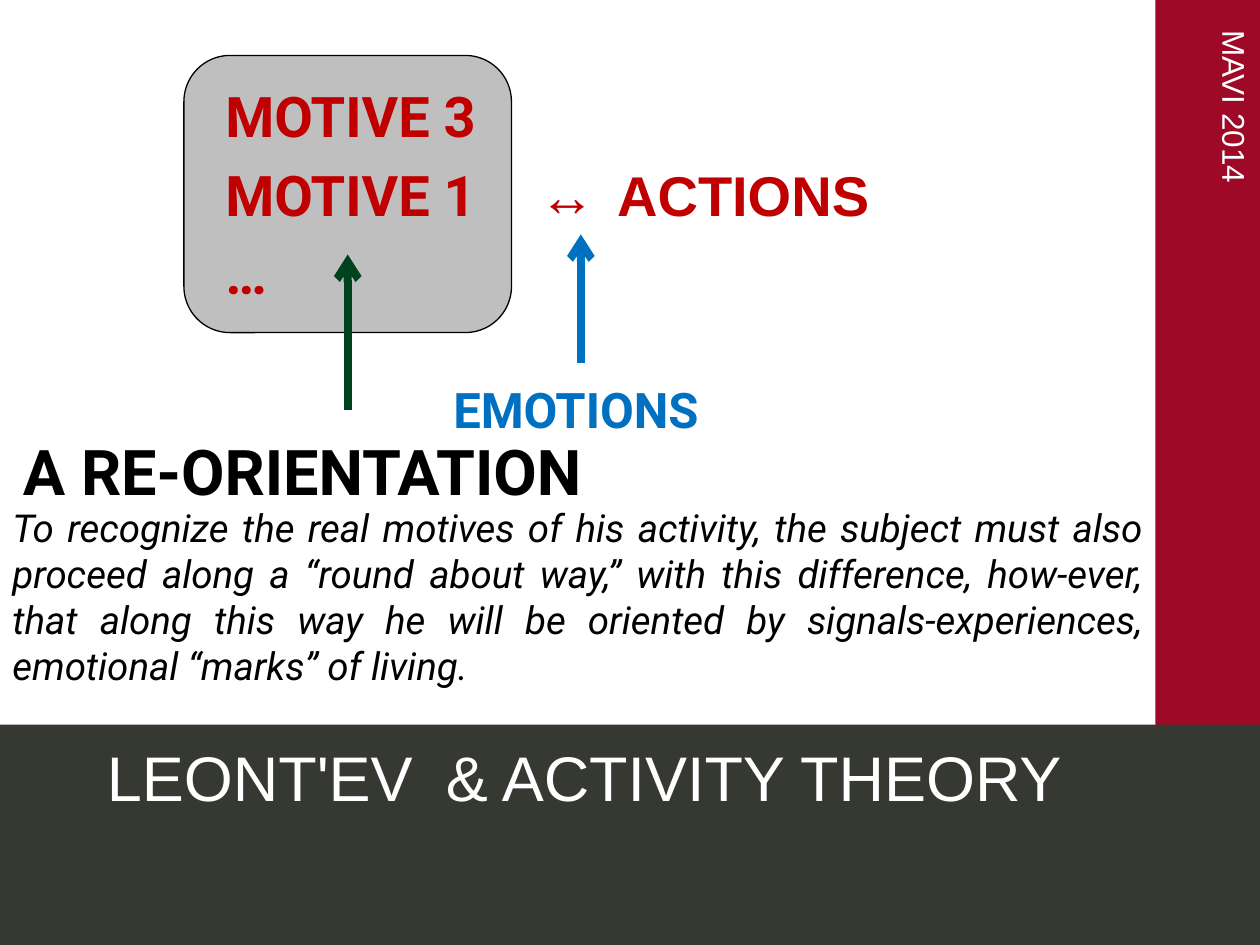
from dataclasses import dataclass

from lxml.etree import SubElement
from pptx import Presentation
from pptx.dml.color import RGBColor
from pptx.enum.shapes import MSO_CONNECTOR, MSO_SHAPE
from pptx.enum.text import MSO_ANCHOR, PP_ALIGN
from pptx.oxml.ns import qn
from pptx.util import Inches, Pt


@dataclass(frozen=True)
class Theme:
    crimson: str = "9E0927"
    charcoal: str = "363832"
    gray: str = "BFBFBF"
    red: str = "C00000"
    blue: str = "0070C0"
    green: str = "00421E"
    black: str = "000000"
    white: str = "FFFFFF"
    heading: str = "Roboto"
    plain: str = "Arial"
    title_size: int = 36
    motive_size: int = 32
    emotion_size: int = 28
    quote_size: int = 22
    label_size: int = 18


THEME = Theme()


def add_text(slide, box, paragraphs, size, color, font=THEME.heading, bold=False,
             italic=False, align=PP_ALIGN.LEFT, anchor=MSO_ANCHOR.TOP,
             tabs=(), space_before=0, rotation=0):
    """Each paragraph is a list of strings or (string, font name) pairs."""
    text_box = slide.shapes.add_textbox(*map(Inches, box))
    text_box.rotation = rotation
    frame = text_box.text_frame
    frame.word_wrap = True
    frame.vertical_anchor = anchor
    for index, pieces in enumerate(paragraphs):
        paragraph = frame.add_paragraph() if index else frame.paragraphs[0]
        paragraph.alignment = align
        if index:
            paragraph.space_before = Pt(space_before)
        if tabs:
            stops = SubElement(paragraph._p.get_or_add_pPr(), qn("a:tabLst"))
            for stop in tabs:
                SubElement(stops, qn("a:tab"), pos=str(Inches(stop)), algn="l")
        for piece in pieces:
            words, face = (piece, font) if isinstance(piece, str) else piece
            run = paragraph.add_run()
            run.text = words
            run.font.name = face
            run.font.size = Pt(size)
            run.font.bold = bold
            run.font.italic = italic
            run.font.color.rgb = RGBColor.from_string(color)


def add_panel(slide, box, fill, kind=MSO_SHAPE.RECTANGLE, outline=None):
    panel = slide.shapes.add_shape(kind, *map(Inches, box))
    panel.shadow.inherit = False
    panel.fill.solid()
    panel.fill.fore_color.rgb = RGBColor.from_string(fill)
    if outline:
        panel.line.color.rgb = RGBColor.from_string(outline)
        panel.line.width = Pt(0.75)
    else:
        panel.line.fill.background()


def add_up_arrow(slide, x, bottom, top, color):
    arrow = slide.shapes.add_connector(
        MSO_CONNECTOR.STRAIGHT, Inches(x), Inches(bottom), Inches(x), Inches(top))
    arrow.line.color.rgb = RGBColor.from_string(color)
    arrow.line.width = Pt(4.5)
    SubElement(arrow.line._get_or_add_ln(), qn("a:tailEnd"), type="arrow")
    SubElement(arrow._element.spPr, qn("a:effectLst"))


def add_side_band(slide, box):
    left, top, width, height = box
    add_panel(slide, box, THEME.crimson)
    length, depth = 3.84, 0.4
    center_x, center_y = left + width - 0.2, top + 0.14 + length / 2
    add_text(slide, (center_x - length / 2, center_y - depth / 2, length, depth),
             [["MAVI 2014"]], THEME.label_size, THEME.white, THEME.plain, rotation=90)


def add_title_band(slide, box):
    left, top, width, height = box
    add_panel(slide, box, THEME.charcoal)
    add_text(slide, (left + 0.75, top, 8.92, 0.83),
             [["LEONT'EV\t& ACTIVITY THEORY"]], THEME.title_size, THEME.white,
             THEME.plain, anchor=MSO_ANCHOR.MIDDLE, tabs=[2.69])


def add_motive_diagram(slide, box):
    left, top, width, height = box
    add_panel(slide, (left, top, 2.6, 2.2), THEME.gray,
              MSO_SHAPE.ROUNDED_RECTANGLE, THEME.black)
    add_text(slide, (left + 0.23, top + 0.16, width - 0.23, 2),
             [["MOTIVE 3"],
              ["MOTIVE 1", ("\t↔\tACTIONS", THEME.plain)],
              ["…"]],
             THEME.motive_size, THEME.red, bold=True,
             tabs=[2.49, 3.11], space_before=6.4)
    add_up_arrow(slide, left + 3.15, top + 2.44, top + 1.42, THEME.blue)
    add_text(slide, (left + 2.04, top + 2.52, 2.6, 0.57), [["EMOTIONS"]],
             THEME.emotion_size, THEME.blue, bold=True)
    add_up_arrow(slide, left + 1.3, top + 2.81, top + 1.58, THEME.green)


def add_reorientation(slide, box):
    left, top, width, height = box
    add_text(slide, (left, top, 4.8, 0.71), [["A RE-ORIENTATION"]],
             THEME.title_size, THEME.black, bold=True, align=PP_ALIGN.CENTER)
    quote = ("To recognize the real motives of his activity, the subject must also "
             "proceed along a “round about way,” with this difference, how-ever, "
             "that along this way he will be oriented by signals-experiences, "
             "emotional “marks” of living.")
    add_text(slide, (left, top + 0.57, width, height - 0.57), [[quote]],
             THEME.quote_size, THEME.black, italic=True, align=PP_ALIGN.JUSTIFY)


def main():
    deck = Presentation()
    deck.slide_width, deck.slide_height = Inches(10), Inches(7.5)
    slide = deck.slides.add_slide(deck.slide_layouts[6])
    add_side_band(slide, (9.17, 0, 0.83, 7.5))
    add_title_band(slide, (0, 5.75, 10, 1.75))
    add_motive_diagram(slide, (1.46, 0.44, 7.4, 3.09))
    add_reorientation(slide, (0, 3.38, 9.17, 2.18))
    deck.save("out.pptx")


if __name__ == "__main__":
    main()
